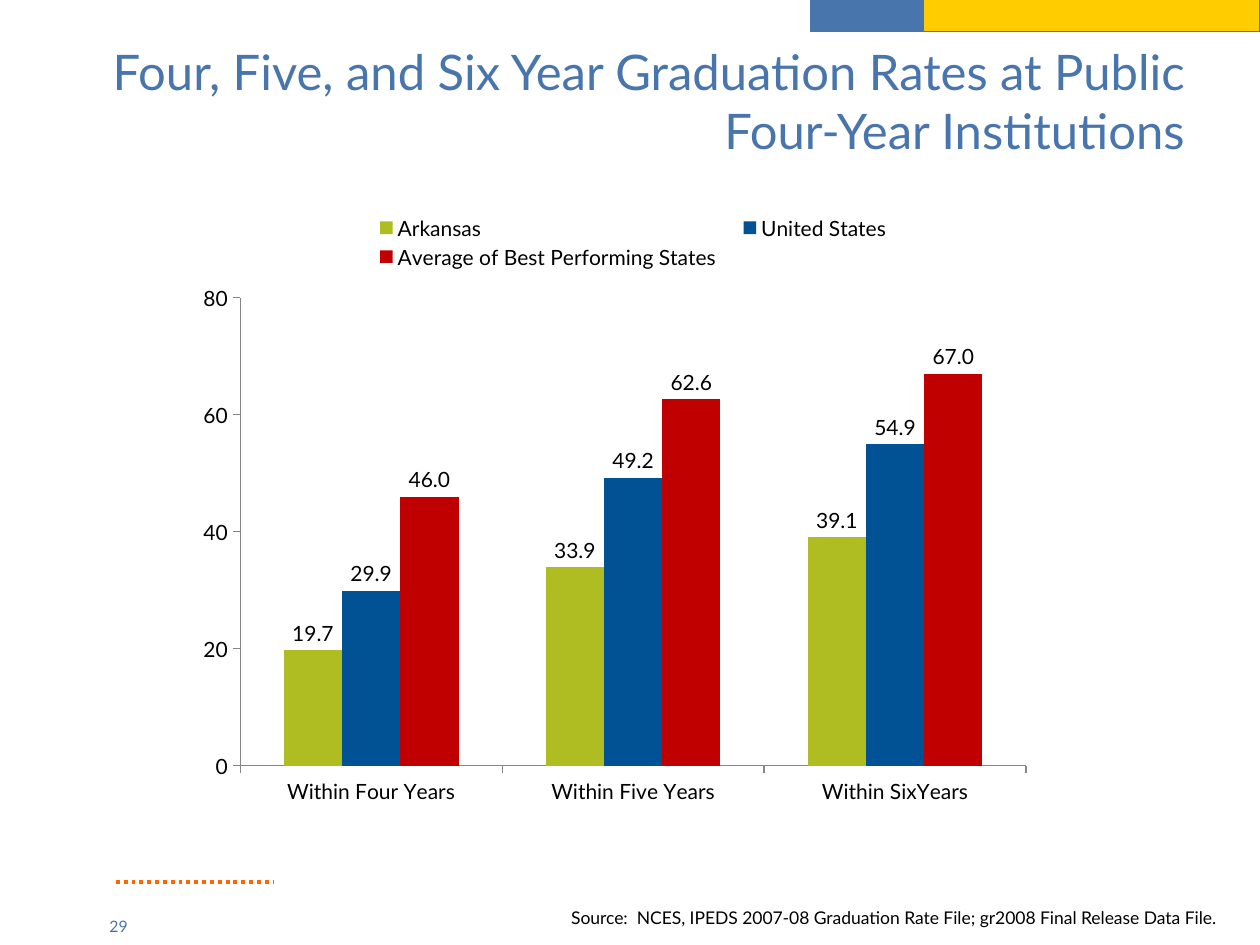
from lxml import etree
from pptx import Presentation
from pptx.chart.data import CategoryChartData
from pptx.dml.color import RGBColor
from pptx.enum import chart as charts, dml, shapes, text
from pptx.oxml import ns
from pptx.util import Inches, Pt

BLUE, YELLOW, ORANGE, BLACK, GREY = "4975AD", "FFCC00", "FF6600", "000000", "868686"


def color(hex_code):
    """Turn a hex string into a colour."""
    return RGBColor.from_string(hex_code)


class Deck:
    """Style and current slide, measured on a grid of 100 columns by 75 rows."""

    font = "Lato"
    columns, rows = 100, 75

    def __init__(self, width, height):
        """Open a presentation with one blank slide."""
        self.show = Presentation()
        self.show.slide_width, self.show.slide_height = Inches(width), Inches(height)
        self.slide = self.show.slides.add_slide(self.show.slide_layouts[6])

    def grid(self, *lengths):
        """Convert alternating columns and rows to lengths."""
        units = self.show.slide_width / self.columns, self.show.slide_height / self.rows
        return [round(length * units[i % 2]) for i, length in enumerate(lengths)]

    def style(self, font, size, hex_code):
        """Apply the house font."""
        font.name, font.size = self.font, Pt(size)
        font.color.rgb = color(hex_code)

    def label(self, place, words, size, hex_code, align="LEFT", anchor="TOP"):
        """Add a wrapped text box."""
        frame = self.slide.shapes.add_textbox(*self.grid(*place)).text_frame
        frame.word_wrap = True
        frame.vertical_anchor = getattr(text.MSO_ANCHOR, anchor)
        frame.text = words
        frame.paragraphs[0].alignment = getattr(text.PP_ALIGN, align)
        self.style(frame.paragraphs[0].runs[0].font, size, hex_code)

    def band(self, place, fill, outline):
        """Add a filled rectangle."""
        bar = self.slide.shapes.add_shape(shapes.MSO_SHAPE.RECTANGLE, *self.grid(*place))
        bar.shadow.inherit = False
        bar.fill.solid()
        bar.fill.fore_color.rgb = color(fill)
        bar.line.color.rgb = color(outline)
        bar.line.width = Pt(0.75)

    def dotted_rule(self, ends, hex_code, weight):
        """Add a dotted straight line."""
        rule = self.slide.shapes.add_connector(shapes.MSO_CONNECTOR.STRAIGHT, *self.grid(*ends))
        rule.line.color.rgb = color(hex_code)
        rule.line.width = Pt(weight)
        rule.line.dash_style = dml.MSO_LINE.ROUND_DOT
        etree.SubElement(rule.element.spPr, ns.qn("a:effectLst"))

    def arrange(self, part, index, target, shares):
        """Pin a chart part to shares of the chart's size."""
        for old in part.findall(ns.qn("c:layout")):
            part.remove(old)
        layout = etree.Element(ns.qn("c:layout"))
        manual = etree.SubElement(layout, ns.qn("c:manualLayout"))
        values = {"xMode": "edge", "yMode": "edge", **dict(zip("xywh", shares))}
        if target:
            values = {"layoutTarget": target, **values}
        for name, value in values.items():
            etree.SubElement(manual, ns.qn(f"c:{name}")).set("val", str(value))
        part.insert(index, layout)

    def columns_chart(self, place, categories, series, top, step):
        """Add a clustered column chart with a legend above it."""
        data = CategoryChartData(number_format="0.0")
        data.categories = categories
        for name, _, values in series:
            data.add_series(name, values)
        kind = charts.XL_CHART_TYPE.COLUMN_CLUSTERED
        chart = self.slide.shapes.add_chart(kind, *self.grid(*place), data).chart
        self.style(chart.font, 12, BLACK)
        chart.has_title = False
        chart.has_legend = True
        chart.legend.position = charts.XL_LEGEND_POSITION.TOP
        chart.legend.include_in_layout = False
        self.arrange(chart.element.find(".//" + ns.qn("c:plotArea")), 0, "inner", (0.06, 0.16, 0.92, 0.76))
        self.arrange(chart.element.find(".//" + ns.qn("c:legend")), 1, None, (0.2, 0.02, 0.64, 0.1))

        scale = chart.value_axis
        scale.minimum_scale, scale.maximum_scale, scale.major_unit = 0, top, step
        scale.has_major_gridlines = False
        scale.tick_labels.number_format = "0"
        scale.tick_labels.number_format_is_linked = False
        for axis in (scale, chart.category_axis):
            axis.major_tick_mark = charts.XL_TICK_MARK.OUTSIDE
            axis.minor_tick_mark = charts.XL_TICK_MARK.NONE
            axis.format.line.color.rgb = color(GREY)
            axis.format.line.width = Pt(0.75)

        plot = chart.plots[0]
        plot.gap_width, plot.overlap = 150, 0
        plot.vary_by_categories = False
        for bars, (_, fill, _) in zip(plot.series, series):
            bars.format.fill.solid()
            bars.format.fill.fore_color.rgb = color(fill)
            bars.invert_if_negative = False
            labels = bars.data_labels
            labels.show_value = True
            labels.number_format = "0.0"
            labels.number_format_is_linked = False
            labels.position = charts.XL_LABEL_POSITION.OUTSIDE_END
            self.style(labels.font, 12, BLACK)


def main():
    """Build the graduation rates slide."""
    deck = Deck(10, 7.5)
    deck.dotted_rule((9.2, 70, 21.7, 70), ORANGE, 2.25)
    for left, width, fill in ((64.3, 9.1, BLUE), (73.3, 26.7, YELLOW)):
        deck.band((left, -0.1, width, 2.6), fill, BLUE)
    deck.label((5, 2.7, 90, 10.5), "Four, Five, and Six Year Graduation Rates at Public Four-Year Institutions",
               28, BLUE, "RIGHT", "MIDDLE")
    deck.label((40.8, 71.5, 56.7, 2.7),
               "Source:  NCES, IPEDS 2007-08 Graduation Rate File; gr2008 Final Release Data File.",
               10, BLACK, "RIGHT")
    rates = [
        ("Arkansas", "AFBD22", (19.7, 33.9, 39.1)),
        ("United States", "005295", (29.9, 49.2, 54.9)),
        ("Average of Best Performing States", "C00000", (46, 62.6, 67)),
    ]
    deck.columns_chart((15, 15.8, 67.8, 48.9),
                       ("Within Four Years", "Within Five Years", "Within SixYears"), rates, 80, 20)
    deck.label((7.7, 72.3, 10, 2.7), "29", 9, BLUE)
    deck.show.save("out.pptx")


if __name__ == "__main__":
    main()
